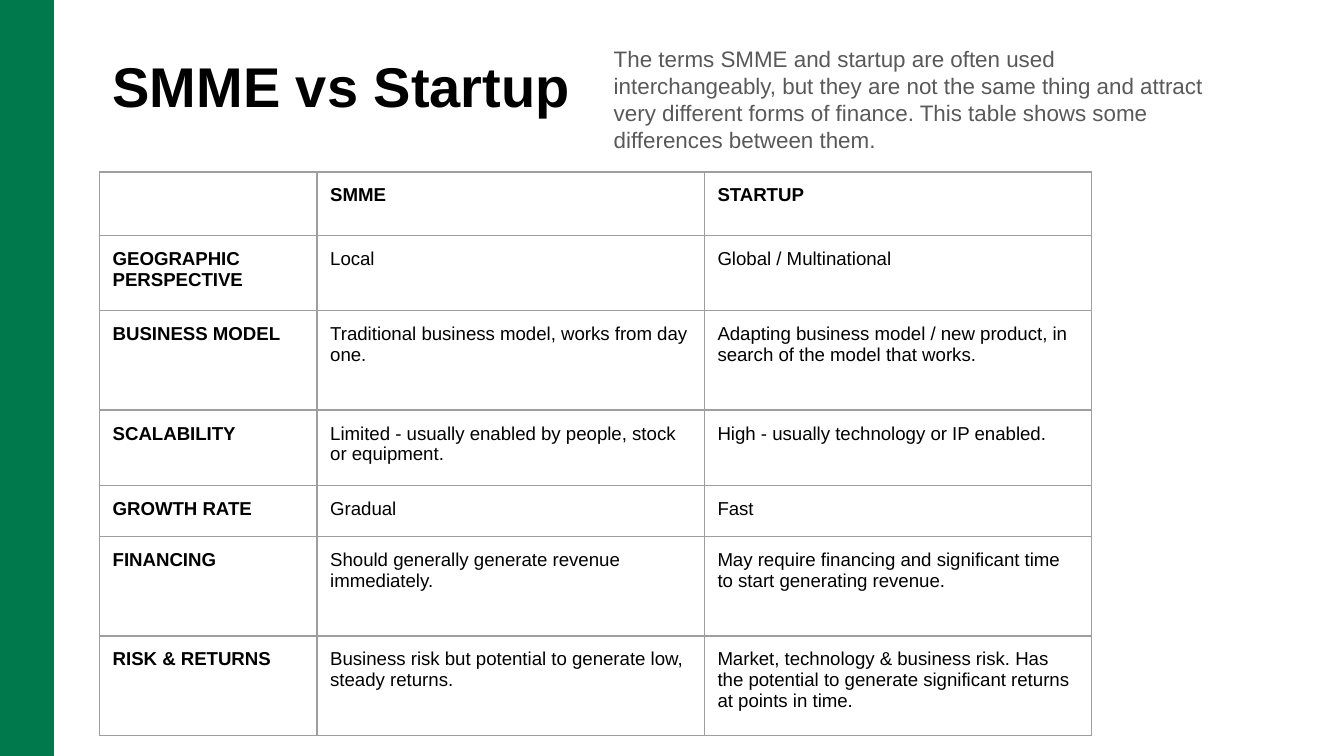
"""Build the slide that compares an SMME with a startup in a table."""
from lxml import etree
from pptx import Presentation
from pptx.dml.color import RGBColor
from pptx.enum.shapes import MSO_SHAPE
from pptx.enum.text import MSO_ANCHOR
from pptx.oxml.ns import qn
from pptx.util import Cm, Pt

RECTANGLE = MSO_SHAPE.RECTANGLE
TOP, MIDDLE = MSO_ANCHOR.TOP, MSO_ANCHOR.MIDDLE
GREEN = RGBColor(0x00, 0x7A, 0x4D)
BLACK = RGBColor(0x00, 0x00, 0x00)
GREY = RGBColor(0x59, 0x59, 0x59)
BORDER = RGBColor(0x9E, 0x9E, 0x9E)

TITLE = "SMME vs Startup"
INTRODUCTION = (
    "The terms SMME and startup are often used interchangeably, but they are "
    "not the same thing and attract very different forms of finance. This "
    "table shows some differences between them."
)
ROWS = [
    ("", "SMME", "STARTUP"),
    ("GEOGRAPHIC PERSPECTIVE", "Local", "Global / Multinational"),
    ("BUSINESS MODEL", "Traditional business model, works from day one.",
     "Adapting business model / new product, in search of the model that works."),
    ("SCALABILITY", "Limited - usually enabled by people, stock or equipment.",
     "High - usually technology or IP enabled."),
    ("GROWTH RATE", "Gradual", "Fast"),
    ("FINANCING", "Should generally generate revenue immediately.",
     "May require financing and significant time to start generating revenue."),
    ("RISK & RETURNS", "Business risk but potential to generate low, steady returns.",
     "Market, technology & business risk. Has the potential to generate "
     "significant returns at points in time."),
]
COLUMN_WIDTHS = [4.11, 7.32, 7.32]
ROW_HEIGHTS = [1.2, 1.42, 1.88, 1.42, 0.97, 1.88, 1.88]
LEFT = 1.88
INSET = Cm(0.25)
MARGINS = {f"margin_{side}": INSET for side in ("left", "top", "right", "bottom")}


def set_all(target, values):
    for name, value in values.items():
        setattr(target, name, value)


def write(paragraph, text, size, color, bold=False):
    paragraph.text = text
    set_all(paragraph.font, {"name": "Arial", "size": Pt(size), "bold": bold})
    paragraph.font.color.rgb = color


def add_text(slide, position, text, size, color, anchor, bold=False):
    frame = slide.shapes.add_textbox(*map(Cm, position)).text_frame
    set_all(frame, {"word_wrap": True, "vertical_anchor": anchor, **MARGINS})
    write(frame.paragraphs[0], text, size, color, bold)


def add_borders(cell):
    properties = cell._tc.get_or_add_tcPr()
    for position, side in enumerate(("lnL", "lnR", "lnT", "lnB")):
        line = etree.Element(qn(f"a:{side}"), w=str(Pt(0.75)))
        fill = etree.SubElement(line, qn("a:solidFill"))
        etree.SubElement(fill, qn("a:srgbClr"), val=str(BORDER))
        properties.insert(position, line)


def add_comparison(slide):
    table = slide.shapes.add_table(
        len(ROWS), len(COLUMN_WIDTHS), Cm(LEFT), Cm(3.25),
        Cm(sum(COLUMN_WIDTHS)), Cm(sum(ROW_HEIGHTS))).table
    set_all(table, {"first_row": False, "horz_banding": False})
    for column, width in zip(table.columns, COLUMN_WIDTHS):
        column.width = Cm(width)
    for row_index, (row, height) in enumerate(zip(table.rows, ROW_HEIGHTS)):
        row.height = Cm(height)
        for column_index, cell in enumerate(row.cells):
            set_all(cell, {"vertical_anchor": TOP, **MARGINS})
            cell.fill.background()
            add_borders(cell)
            is_heading = row_index == 0 or column_index == 0
            write(cell.text_frame.paragraphs[0], ROWS[row_index][column_index],
                  10, BLACK, is_heading)


def main():
    presentation = Presentation()
    set_all(presentation, {"slide_width": Cm(25.4), "slide_height": Cm(14.29)})
    slide = presentation.slides.add_slide(presentation.slide_layouts[6])
    band = slide.shapes.add_shape(
        RECTANGLE, 0, 0, Cm(1.02), presentation.slide_height)
    band.shadow.inherit = False
    band.fill.solid()
    band.fill.fore_color.rgb = GREEN
    band.line.fill.background()
    add_text(slide, (LEFT, 0.61, 17.73, 2.01), TITLE, 30, BLACK, MIDDLE, bold=True)
    add_comparison(slide)
    add_text(slide, (11.35, 0.61, 11.91, 1.47), INTRODUCTION, 12, GREY, TOP)
    presentation.save("out.pptx")


if __name__ == "__main__":
    main()
